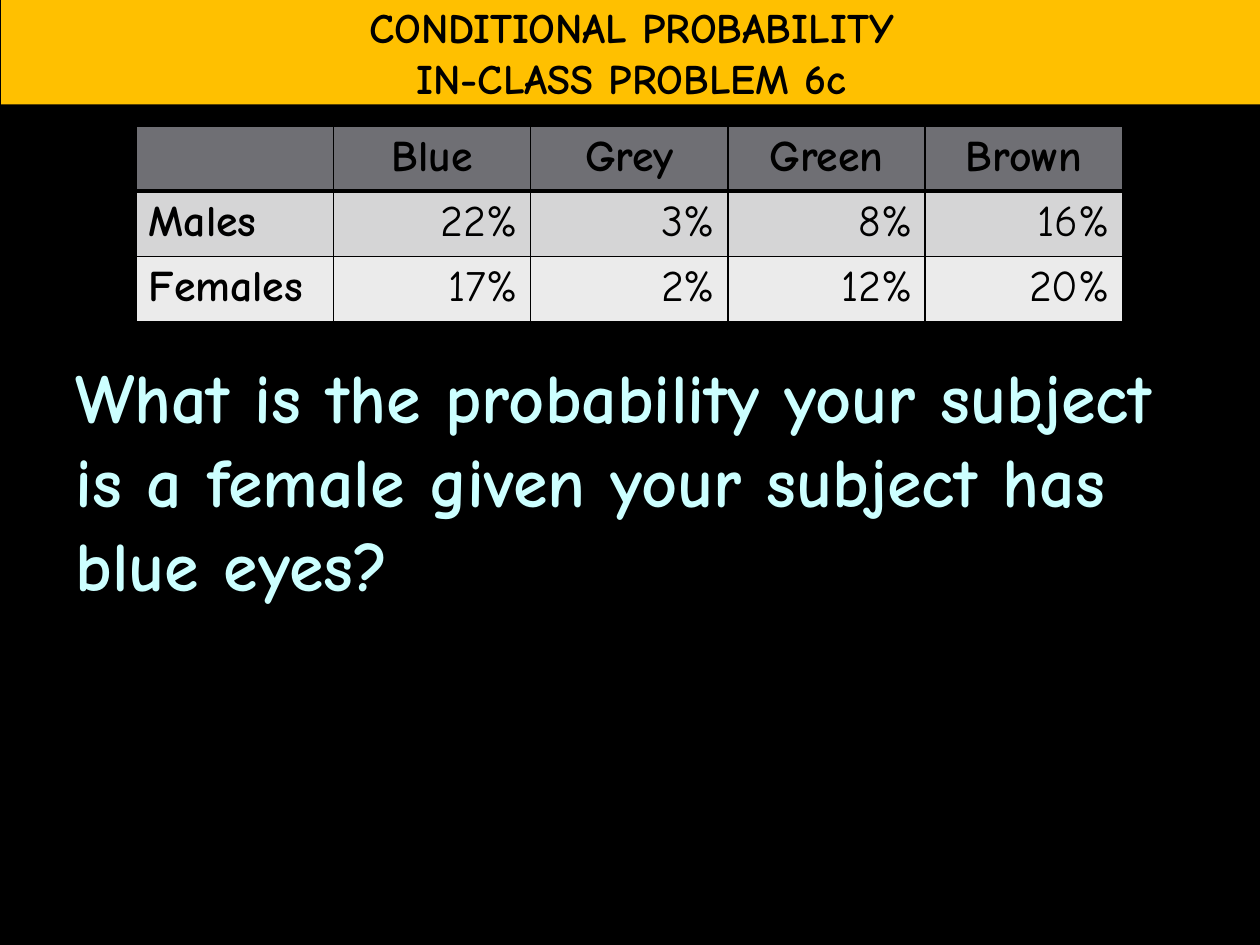
from pptx import Presentation
from pptx.dml.color import RGBColor
from pptx.enum.shapes import MSO_SHAPE
from pptx.enum.text import MSO_ANCHOR, PP_ALIGN
from pptx.oxml import parse_xml
from pptx.oxml.ns import nsdecls
from pptx.util import Inches, Pt

LEFT, CENTER, RIGHT = PP_ALIGN.LEFT, PP_ALIGN.CENTER, PP_ALIGN.RIGHT
MIDDLE, TOP = MSO_ANCHOR.MIDDLE, MSO_ANCHOR.TOP
RECTANGLE = MSO_SHAPE.RECTANGLE

COLORS = {
    "black": "000000",
    "banner": "FFC000",
    "question": "CCFFFF",
    "header": "6F6F74",
    "males": "D5D5D6",
    "females": "EBEBEB",
}


def rgb(name):
    return RGBColor.from_string(COLORS[name])


class SlideBuilder:
    """Holds the style and the current slide."""

    font = "Comic Neue"

    def __init__(self, page):
        self.page = page

    def background(self, color):
        fill = self.page.background.fill
        fill.solid()
        fill.fore_color.rgb = rgb(color)

    def add_lines(self, frame, lines, size, color="black", bold=True, align=LEFT):
        style = {"name": self.font, "size": Pt(size), "bold": bold}
        for index, line in enumerate(lines):
            para = frame.paragraphs[0] if index == 0 else frame.add_paragraph()
            para.alignment = align
            span = para.add_run()
            span.text = line
            for key, value in style.items():
                setattr(span.font, key, value)
            span.font.color.rgb = rgb(color)

    def banner(self, place, lines, size):
        box = self.page.shapes.add_shape(RECTANGLE, *map(Inches, place))
        box.shadow.inherit = False
        box.fill.solid()
        box.fill.fore_color.rgb = rgb("banner")
        box.line.fill.background()
        box.text_frame.word_wrap = False
        box.text_frame.vertical_anchor = MIDDLE
        self.add_lines(box.text_frame, lines, size, align=CENTER)

    def text(self, place, lines, size, color):
        box = self.page.shapes.add_textbox(*map(Inches, place))
        box.text_frame.word_wrap = True
        box.text_frame.vertical_anchor = TOP
        self.add_lines(box.text_frame, lines, size, color)

    def cell_borders(self, cell, bottom):
        properties = cell._tc.get_or_add_tcPr()
        widths = {"lnL": 1, "lnR": 1, "lnT": 1, "lnB": bottom}
        for index, (side, width) in enumerate(widths.items()):
            properties.insert(index, parse_xml(
                f'<a:{side} {nsdecls("a")} w="{Pt(width)}"><a:solidFill>'
                f'<a:srgbClr val="{COLORS["black"]}"/></a:solidFill></a:{side}>'))

    def table(self, place, rows, fills, size):
        shape = self.page.shapes.add_table(
            len(rows), len(rows[0]), *map(Inches, place))
        for r, (values, fill) in enumerate(zip(rows, fills)):
            for c, value in enumerate(values):
                cell = shape.table.cell(r, c)
                cell.fill.solid()
                cell.fill.fore_color.rgb = rgb(fill)
                self.cell_borders(cell, bottom=3 if r == 0 else 1)
                if value:
                    align = CENTER if r == 0 else RIGHT if c else LEFT
                    self.add_lines(cell.text_frame, [value], size,
                                   bold=r == 0 or c == 0, align=align)


def main():
    deck = Presentation()
    deck.slide_width, deck.slide_height = Inches(10), Inches(7.5)
    slide = SlideBuilder(deck.slides.add_slide(deck.slide_layouts[6]))
    slide.background("black")

    # Question
    slide.text(
        (0.5, 2.76, 9, 4.33),
        ["What is the probability your subject is a female given "
         "your subject has blue eyes?"],
        40, "question")

    # Title banner
    slide.banner((0.01, 0, 10, 0.83),
                 ["CONDITIONAL PROBABILITY", "IN-CLASS PROBLEM 6c"], 24)

    # Eye colour by sex
    slide.table(
        (1.08, 1, 7.83, 1.5),
        [["", "Blue", "Grey", "Green", "Brown"],
         ["Males", "22%", "3%", "8%", "16%"],
         ["Females", "17%", "2%", "12%", "20%"]],
        ["header", "males", "females"], 25)

    deck.save("out.pptx")


if __name__ == "__main__":
    main()
